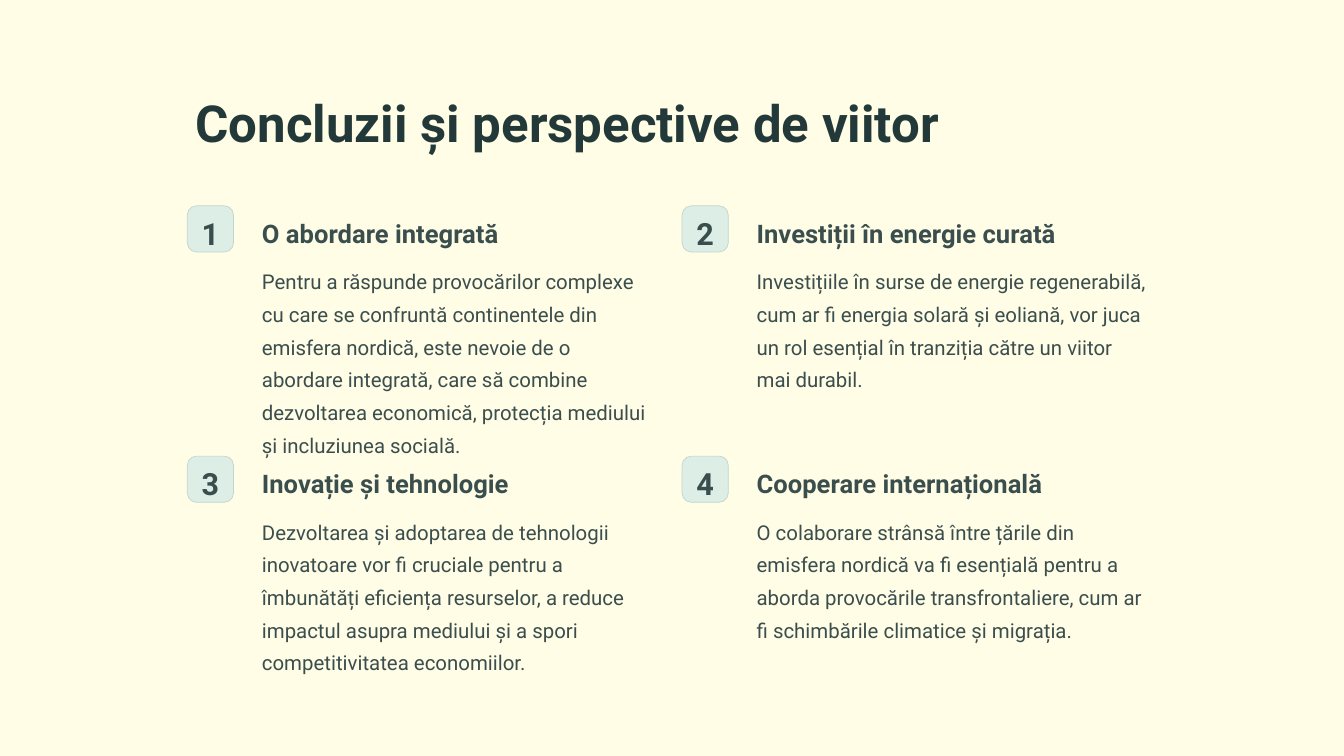
from pptx import Presentation
from pptx.dml.color import RGBColor
from pptx.enum.shapes import MSO_SHAPE
from pptx.enum.text import PP_ALIGN
from pptx.util import Inches, Pt

CREAM = RGBColor(0xFF, 0xFD, 0xE6)
DARK_TEAL = RGBColor(0x23, 0x39, 0x39)
SLATE = RGBColor(0x3B, 0x4E, 0x4E)
MINT = RGBColor(0xDD, 0xEE, 0xE6)
MINT_EDGE = RGBColor(0xC3, 0xD4, 0xCC)

MARGIN = 2.23
GRID_TOP = 2.45
COLUMN_STEP = 5.89
ROW_STEP = 2.98
BADGE_SIZE = 0.55
TEXT_OFFSET = 0.79
TEXT_WIDTH = 4.86

CONCLUSIONS = [
    ("O abordare integrată",
     "Pentru a răspunde provocărilor complexe cu care se confruntă continentele "
     "din emisfera nordică, este nevoie de o abordare integrată, care să combine "
     "dezvoltarea economică, protecția mediului și incluziunea socială."),
    ("Investiții în energie curată",
     "Investițiile în surse de energie regenerabilă, cum ar fi energia solară și "
     "eoliană, vor juca un rol esențial în tranziția către un viitor mai durabil."),
    ("Inovație și tehnologie",
     "Dezvoltarea și adoptarea de tehnologii inovatoare vor fi cruciale pentru a "
     "îmbunătăți eficiența resurselor, a reduce impactul asupra mediului și a "
     "spori competitivitatea economiilor."),
    ("Cooperare internațională",
     "O colaborare strânsă între țările din emisfera nordică va fi esențială "
     "pentru a aborda provocările transfrontaliere, cum ar fi schimbările "
     "climatice și migrația."),
]


def add_text(slide, text, left, top, width, height, *, size, leading,
             color=SLATE, bold=False, align=PP_ALIGN.LEFT):
    frame = slide.shapes.add_textbox(
        Inches(left), Inches(top), Inches(width), Inches(height)).text_frame
    frame.word_wrap = True
    paragraph = frame.paragraphs[0]
    paragraph.alignment = align
    paragraph.line_spacing = Pt(leading)
    run = paragraph.add_run()
    run.text = text
    run.font.name = "Roboto"
    run.font.size = Pt(size)
    run.font.bold = bold
    run.font.color.rgb = color


def add_badge(slide, number, left, top):
    badge = slide.shapes.add_shape(
        MSO_SHAPE.ROUNDED_RECTANGLE, Inches(left), Inches(top),
        Inches(BADGE_SIZE), Inches(BADGE_SIZE))
    badge.adjustments[0] = 0.2
    badge.shadow.inherit = False
    badge.fill.solid()
    badge.fill.fore_color.rgb = MINT
    badge.line.color.rgb = MINT_EDGE
    badge.line.width = Pt(0.6)
    add_text(slide, str(number), left, top + 0.04, BADGE_SIZE, 0.46,
             size=26.2, leading=32.8, bold=True, align=PP_ALIGN.CENTER)


def add_conclusion(slide, number, heading, body, left, top):
    add_badge(slide, number, left, top)
    text_left = left + TEXT_OFFSET
    add_text(slide, heading, text_left, top + 0.08, TEXT_WIDTH, 0.38,
             size=21.9, leading=27.3, bold=True)
    add_text(slide, body, text_left, top + 0.61, TEXT_WIDTH, 1.94,
             size=17.5, leading=28)


def build_conclusions_slide(presentation):
    slide = presentation.slides.add_slide(presentation.slide_layouts[6])
    slide.background.fill.solid()
    slide.background.fill.fore_color.rgb = CREAM
    add_text(slide, "Concluzii și perspective de viitor", MARGIN, 1.01, 10.6, 0.76,
             size=43.7, leading=54.7, color=DARK_TEAL, bold=True)
    for index, (heading, body) in enumerate(CONCLUSIONS):
        row, column = divmod(index, 2)
        add_conclusion(slide, index + 1, heading, body,
                       MARGIN + column * COLUMN_STEP, GRID_TOP + row * ROW_STEP)


def main():
    presentation = Presentation()
    presentation.slide_width = Inches(16)
    presentation.slide_height = Inches(9)
    build_conclusions_slide(presentation)
    presentation.save("out.pptx")


if __name__ == "__main__":
    main()
